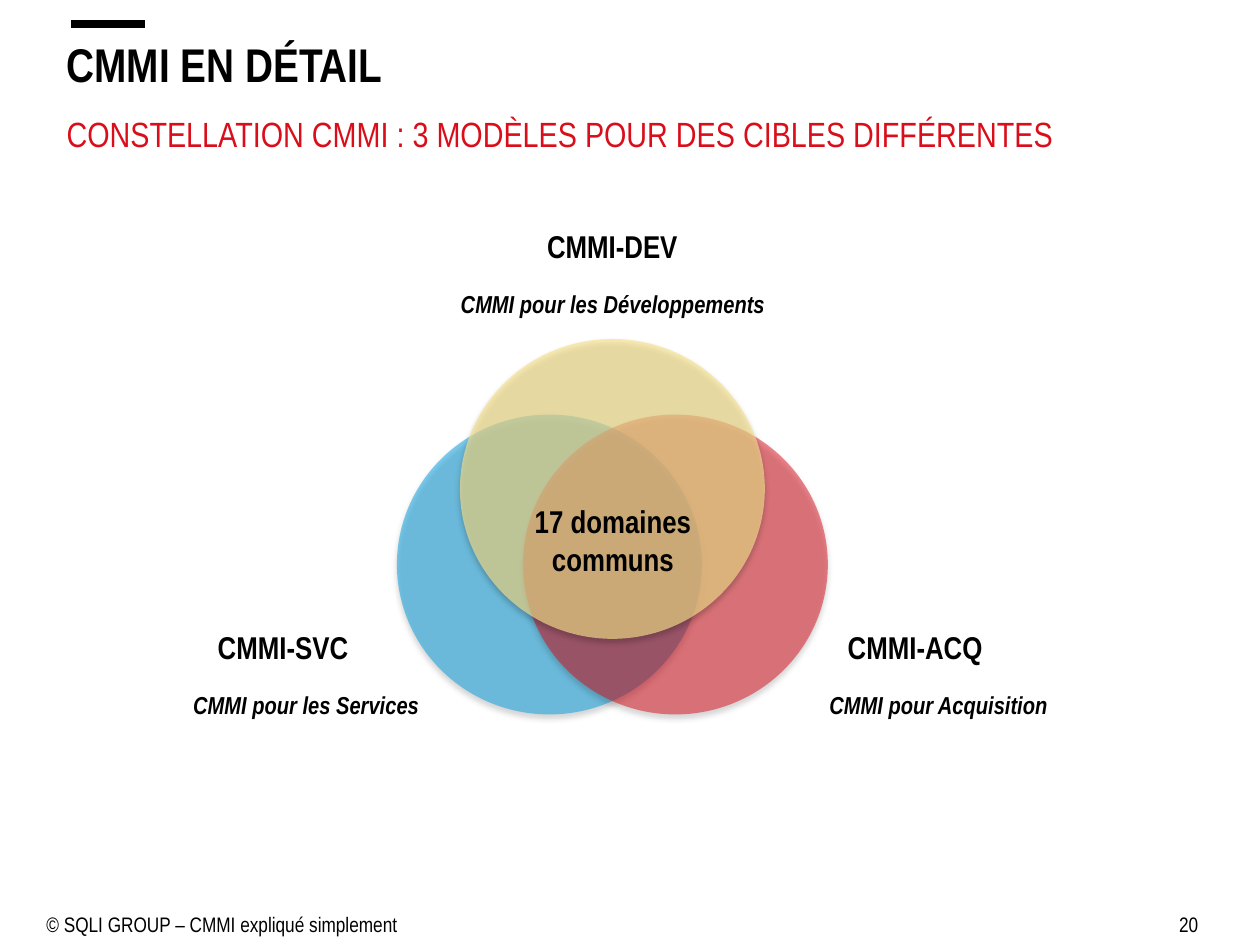
from lxml.etree import SubElement
from pptx import Presentation
from pptx.dml.color import RGBColor
from pptx.enum.shapes import MSO_CONNECTOR, MSO_SHAPE
from pptx.enum.text import MSO_ANCHOR as Anchor, PP_ALIGN as Align
from pptx.oxml.ns import qn
from pptx.util import Inches, Pt

BLACK = RGBColor(0x00, 0x00, 0x00)
RED = RGBColor(0xDA, 0x0E, 0x1A)
BLUE = RGBColor(0x00, 0x9E, 0xE0)
YELLOW = RGBColor(0xF7, 0xE1, 0x8D)
FONT = "Arial Narrow"

TITLE = "CMMI EN DÉTAIL"
SUBTITLE = "CONSTELLATION CMMI : 3 MODÈLES POUR DES CIBLES DIFFÉRENTES"
COMMON = "17 domaines communs"
COPYRIGHT = "© SQLI GROUP – CMMI expliqué simplement"
PAGE = "20"
MODELS = [
    ("CMMI-DEV", (4.03, 1.66), Align.CENTER, "CMMI pour les Développements", (3.17, 3.39), 1.7),
    ("CMMI-SVC", (1.63, 1.66), Align.LEFT, "CMMI pour les Services", (1.14, 2.58), 4.88),
    ("CMMI-ACQ", (6.63, 1.7), Align.LEFT, "CMMI pour Acquisition", (6.2, 2.5), 4.88),
]
CIRCLES = [(BLUE, 50, -1, 1), (RED, 50, 1, 1), (YELLOW, 65, 0, 0)]

WIDTH, HEIGHT = 10, 7.5
MARGIN, CONTENT_WIDTH = 0.43, 9.19
FOOTER_TOP, FOOTER_HEIGHT = 7.17, 0.33
NAME_HEIGHT, CAPTION_HEIGHT = 0.51, 0.42
VENN_CENTER, VENN_TOP = 4.86, 2.69
CIRCLE_WIDTH, CIRCLE_HEIGHT = 2.42, 2.38
SHIFT_X, SHIFT_Y = 0.5, 0.6

deck = Presentation()
deck.slide_width, deck.slide_height = Inches(WIDTH), Inches(HEIGHT)
slide = deck.slides.add_slide(deck.slide_layouts[5])


def write(text, left, top, width, height, holder=None, size=18, color=BLACK, bold=False,
          italic=False, align=Align.LEFT, anchor=Anchor.MIDDLE, spacing=None):
    box = [Inches(length) for length in (left, top, width, height)]
    holder = holder or slide.shapes.add_textbox(*box)
    holder.left, holder.top, holder.width, holder.height = box
    frame = holder.text_frame
    frame.word_wrap = True
    frame.vertical_anchor = anchor
    frame.text = text
    paragraph = frame.paragraphs[0]
    paragraph.alignment = align
    paragraph.line_spacing = spacing
    font = paragraph.runs[0].font
    font.name, font.size, font.bold, font.italic = FONT, Pt(size), bold, italic
    font.color.rgb = color


def set_alpha(color_node, percent):
    SubElement(color_node, qn("a:alpha"), val=str(percent * 1000))


def add_circle(color, opacity, column, row):
    left = VENN_CENTER - CIRCLE_WIDTH / 2 + column * SHIFT_X
    circle = slide.shapes.add_shape(
        MSO_SHAPE.OVAL, Inches(left), Inches(VENN_TOP + row * SHIFT_Y),
        Inches(CIRCLE_WIDTH), Inches(CIRCLE_HEIGHT))
    circle.fill.solid()
    circle.fill.fore_color.rgb = color
    circle.line.fill.background()
    circle.shadow.inherit = False
    properties = circle.element.spPr
    set_alpha(properties.find(qn("a:solidFill"))[0], opacity)
    shadow = SubElement(properties.find(qn("a:effectLst")), qn("a:outerShdw"),
                        blurRad=str(Pt(3.5)), dist=str(Pt(2.2)), dir="5400000", rotWithShape="0")
    set_alpha(SubElement(shadow, qn("a:srgbClr"), val=str(BLACK)), 32)


accent = slide.shapes.add_connector(
    MSO_CONNECTOR.STRAIGHT, Inches(0.56), Inches(0.19), Inches(1.15), Inches(0.19))
accent.line.color.rgb = BLACK
accent.line.width = Pt(4.5)
SubElement(accent.element.spPr, qn("a:effectLst"))

write(TITLE, MARGIN, 0.31, CONTENT_WIDTH, 0.39, holder=slide.shapes.title, size=27, bold=True)
write(SUBTITLE, MARGIN, 0.76, CONTENT_WIDTH, 0.55, size=20, color=RED,
      anchor=Anchor.TOP, spacing=1.25)

for circle in CIRCLES:
    add_circle(*circle)
write(COMMON, 3.9, 3.93, 1.93, 0.71, bold=True, align=Align.CENTER)

for name, (name_left, name_width), align, caption, (left, width), top in MODELS:
    write(name, name_left, top, name_width, NAME_HEIGHT, bold=True, align=align)
    write(caption, left, top + NAME_HEIGHT - 0.01, width, CAPTION_HEIGHT, size=14,
          bold=True, italic=True, align=Align.CENTER)

write(COPYRIGHT, 0.27, FOOTER_TOP, 5.53, FOOTER_HEIGHT, size=12)
write(PAGE, 9.26, FOOTER_TOP, 0.63, FOOTER_HEIGHT, size=12)

deck.save("out.pptx")
